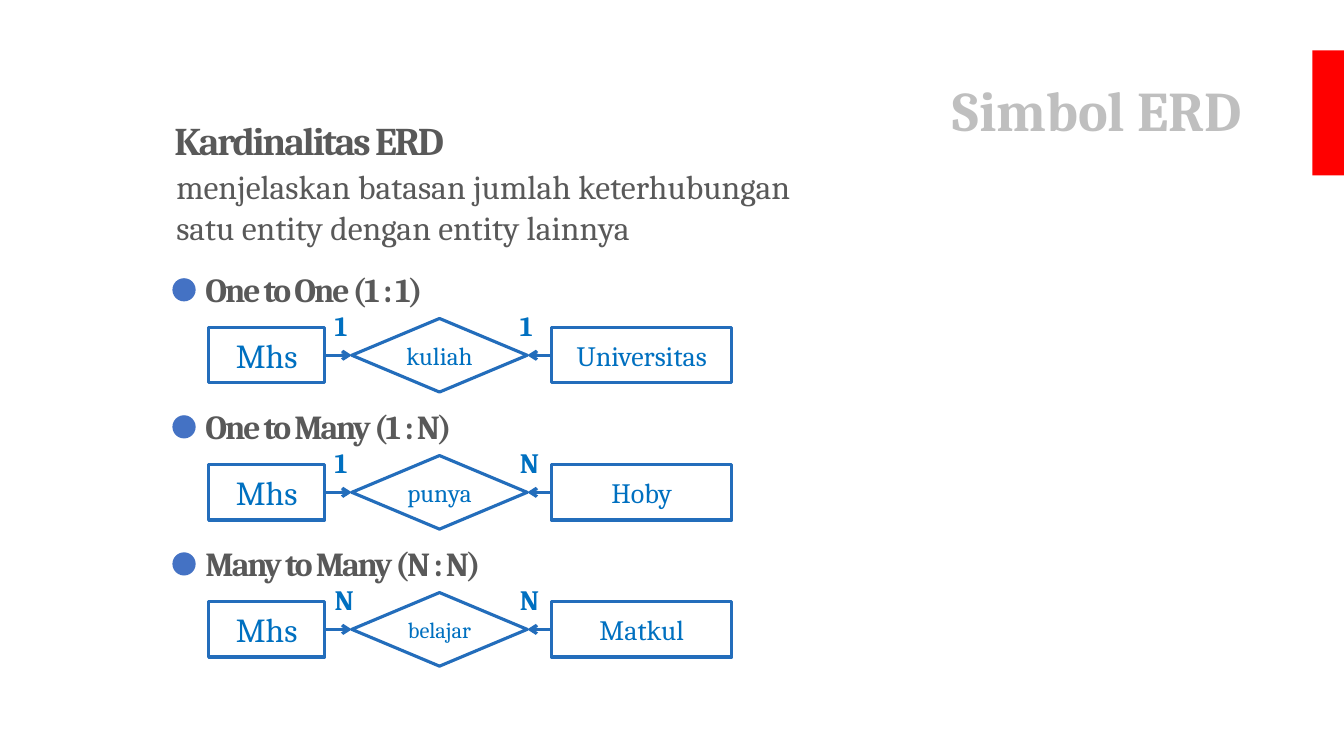
from dataclasses import dataclass
from typing import Optional

from lxml.etree import SubElement
from pptx import Presentation
from pptx.dml.color import RGBColor
from pptx.enum.shapes import MSO_CONNECTOR, MSO_SHAPE
from pptx.enum.text import MSO_ANCHOR, MSO_AUTO_SIZE, PP_ALIGN
from pptx.oxml.ns import qn
from pptx.slide import Slide
from pptx.text.text import TextFrame
from pptx.util import Inches, Pt

# The slide is a grid of 100 columns by 100 rows
WIDTH, HEIGHT = Inches(13.33), Inches(7.5)


@dataclass(frozen=True)
class Theme:
    font: str = "Cambria"
    title: str = "BFBFBF"
    text: str = "595959"
    bar: str = "FF0000"
    bullet: str = "4472C4"
    outline: str = "236DBB"
    entity: str = "0070C0"
    title_size: int = 40
    heading_size: int = 28
    body_size: int = 24
    label_size: int = 20
    relation_size: int = 18
    small_size: int = 16
    line_width: float = 2.25


THEME = Theme()


@dataclass(frozen=True)
class Box:
    col: float
    row: float
    cols: float
    rows: float

    def place(self) -> dict[str, int]:
        return {"left": x(self.col), "top": y(self.row),
                "width": x(self.cols), "height": y(self.rows)}


@dataclass(frozen=True)
class Style:
    size: int
    color: str
    bold: bool = False
    spacing: float = 0
    align: Optional[PP_ALIGN] = None


@dataclass(frozen=True)
class Cardinality:
    heading: str
    left_mark: str
    relation: str
    right_mark: str
    entity: str
    relation_size: int = THEME.relation_size


TITLE = Style(THEME.title_size, THEME.title, True, align=PP_ALIGN.RIGHT)
HEADING = Style(THEME.heading_size, THEME.text, True, -1.5)
BODY = Style(THEME.body_size, THEME.text)
SUBHEADING = Style(THEME.body_size, THEME.text, True, -1.5)
MARK = Style(THEME.label_size, THEME.entity, True)

CARDINALITIES = [
    Cardinality("One to One (1 : 1)", "1", "kuliah", "1", "Universitas"),
    Cardinality("One to Many (1 : N)", "1", "punya", "N", "Hoby"),
    Cardinality("Many to Many (N : N)", "N", "belajar", "N", "Matkul", THEME.small_size),
]
FIRST_ROW, ROW_PITCH = 34.93, 18.13


def x(cols: float) -> int:
    return round(WIDTH * cols / 100)


def y(rows: float) -> int:
    return round(HEIGHT * rows / 100)


def write(tf: TextFrame, text: str, style: Style) -> None:
    p = tf.paragraphs[0]
    p.alignment = style.align
    r = p.add_run()
    r.text = text
    formats = {"name": THEME.font, "size": Pt(style.size), "bold": style.bold}
    for name, value in formats.items():
        setattr(r.font, name, value)
    r.font.color.rgb = RGBColor.from_string(style.color)
    if style.spacing:
        r._r.get_or_add_rPr().set("spc", str(round(style.spacing * 100)))


def add_text(s: Slide, box: Box, text: str, style: Style, wrap: bool = True) -> None:
    tf = s.shapes.add_textbox(**box.place()).text_frame
    tf.word_wrap = wrap
    tf.auto_size = MSO_AUTO_SIZE.SHAPE_TO_FIT_TEXT
    write(tf, text, style)


def add_solid(s: Slide, kind: MSO_SHAPE, box: Box, color: str) -> None:
    sp = s.shapes.add_shape(kind, **box.place())
    sp.shadow.inherit = False
    sp.fill.solid()
    sp.fill.fore_color.rgb = RGBColor.from_string(color)
    sp.line.fill.background()


def add_node(s: Slide, kind: MSO_SHAPE, box: Box, text: str, size: int) -> None:
    sp = s.shapes.add_shape(kind, **box.place())
    sp.shadow.inherit = False
    sp.fill.background()
    sp.line.color.rgb = RGBColor.from_string(THEME.outline)
    sp.line.width = Pt(THEME.line_width)
    sp.text_frame.vertical_anchor = MSO_ANCHOR.MIDDLE
    write(sp.text_frame, text, Style(size, THEME.entity, align=PP_ALIGN.CENTER))


def add_arrow(s: Slide, start: float, end: float, row: float, arrow_end: str) -> None:
    line = s.shapes.add_connector(MSO_CONNECTOR.STRAIGHT, x(start), y(row), x(end), y(row))
    line.line.color.rgb = RGBColor.from_string(THEME.outline)
    line.line.width = Pt(THEME.line_width)
    SubElement(line.line._get_or_add_ln(), qn(arrow_end)).set("type", "arrow")
    SubElement(line._element.spPr, qn("a:effectLst"))


def add_cardinality(s: Slide, item: Cardinality, top: float) -> None:
    # Heading with its bullet
    add_text(s, Box(14.55, top, 33.75, 6.67), item.heading, SUBHEADING)
    add_solid(s, MSO_SHAPE.OVAL, Box(12.83, top + 1.87, 1.73, 3.07), THEME.bullet)

    # Entity, relation, entity
    student = Box(15.53, top + 8.4, 8.63, 7.33)
    relation = Box(26.18, top + 7.2, 13.05, 9.73)
    partner = Box(41.03, top + 8.4, 13.43, 7.33)
    add_node(s, MSO_SHAPE.RECTANGLE, student, "Mhs", THEME.body_size)
    add_node(s, MSO_SHAPE.RECTANGLE, partner, item.entity, THEME.label_size)
    add_node(s, MSO_SHAPE.DIAMOND, relation, item.relation, item.relation_size)

    # Arrows into the relation
    middle = relation.row + relation.rows / 2
    add_arrow(s, student.col + student.cols, relation.col, middle, "a:tailEnd")
    add_arrow(s, relation.col + relation.cols, partner.col, middle, "a:headEnd")

    # Cardinality marks
    for col, mark in ((37.95, item.right_mark), (24.15, item.left_mark)):
        add_text(s, Box(col, top + 5.2, 2.78, 5.87), mark, MARK, wrap=False)


def main() -> None:
    prs = Presentation()
    prs.slide_width, prs.slide_height = WIDTH, HEIGHT
    s = prs.slides.add_slide(prs.slide_layouts[5])

    # Title and side bar
    title = s.shapes.title
    for name, value in Box(6.9, 5.33, 86.25, 19.33).place().items():
        setattr(title, name, value)
    title.text_frame.vertical_anchor = MSO_ANCHOR.MIDDLE
    title.text_frame.paragraphs[0].line_spacing = 0.9
    write(title.text_frame, "Simbol ERD", TITLE)
    add_solid(s, MSO_SHAPE.RECTANGLE, Box(97.65, 6.67, 4.8, 16.53), THEME.bar)

    # Introduction
    add_text(s, Box(12.23, 14.67, 24.68, 7.6), "Kardinalitas ERD", HEADING)
    add_text(s, Box(12.38, 21.33, 50.7, 12.13),
             "menjelaskan batasan jumlah keterhubungan satu entity dengan entity lainnya", BODY)

    # Cardinality diagrams
    for i, item in enumerate(CARDINALITIES):
        add_cardinality(s, item, FIRST_ROW + i * ROW_PITCH)

    prs.save("out.pptx")


if __name__ == "__main__":
    main()
